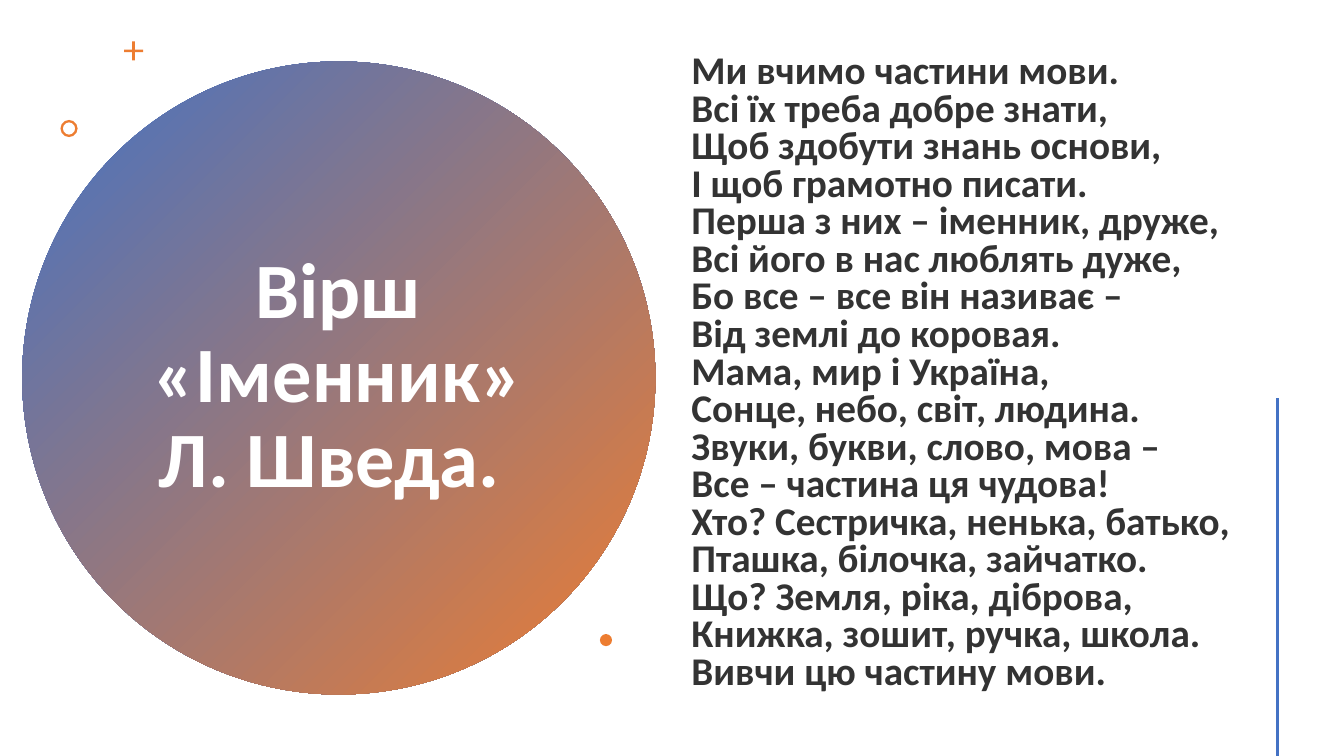
from lxml import etree
from pptx import Presentation
from pptx.dml.color import RGBColor
from pptx.enum.shapes import MSO_CONNECTOR, MSO_SHAPE
from pptx.enum.text import MSO_ANCHOR, PP_ALIGN
from pptx.oxml.ns import qn
from pptx.util import Inches, Pt

OVAL, RING, PLUS = MSO_SHAPE.OVAL, MSO_SHAPE.DONUT, MSO_SHAPE.CROSS
LEFT, CENTER, MIDDLE = PP_ALIGN.LEFT, PP_ALIGN.CENTER, MSO_ANCHOR.MIDDLE
STRAIGHT = MSO_CONNECTOR.STRAIGHT
FONT = "Calibri"
COLORS = {"blue": "4472C4", "orange": "ED7D31", "white": "FFFFFF", "ink": "333333"}
BLANK_LAYOUT = 6

POEM = [
    "Ми вчимо частини мови.",
    "Всі їх треба добре знати,",
    "Щоб здобути знань основи,",
    "І щоб грамотно писати.",
    "Перша з них – іменник, друже,",
    "Всі його в нас люблять дуже,",
    "Бо все – все він називає –",
    "Від землі до коровая.",
    "Мама, мир і Україна,",
    "Сонце, небо, світ, людина.",
    "Звуки, букви, слово, мова –",
    "Все – частина ця чудова!",
    "Хто? Сестричка, ненька, батько,",
    "Пташка, білочка, зайчатко.",
    "Що? Земля, ріка, діброва,",
    "Книжка, зошит, ручка, школа.",
    "Вивчи цю частину мови.",
]

presentation = Presentation()
presentation.slide_width, presentation.slide_height = Inches(13.33), Inches(7.5)
slide = presentation.slides.add_slide(presentation.slide_layouts[BLANK_LAYOUT])


def add_text(lines, left, top, width, height, *, size, color, align=LEFT, spacing=1.0, before=0):
    """Add a bold, vertically centred text box with one paragraph per line."""
    box = slide.shapes.add_textbox(Inches(left), Inches(top), Inches(width), Inches(height))
    frame = box.text_frame
    frame.word_wrap = True
    frame.vertical_anchor = MIDDLE
    frame.text = "\n".join(lines)
    for paragraph in frame.paragraphs:
        paragraph.alignment = align
        paragraph.line_spacing = spacing
        paragraph.space_before = Pt(before)
        font = paragraph.runs[0].font
        font.name, font.size, font.bold = FONT, Pt(size), True
        font.color.rgb = RGBColor.from_string(COLORS[color])


def add_round_shape(kind, left, top, diameter, thickness=None):
    """Add an orange, unlined shape; thickness is a share of its size."""
    shape = slide.shapes.add_shape(
        kind, Inches(left), Inches(top), Inches(diameter), Inches(diameter))
    shape.shadow.inherit = False
    shape.line.fill.background()
    shape.fill.solid()
    shape.fill.fore_color.rgb = RGBColor.from_string(COLORS["orange"])
    if thickness is not None:
        shape.adjustments[0] = thickness
    return shape


circle = add_round_shape(OVAL, 0.22, 0.61, 6.28)
circle.fill.gradient()
circle.fill.gradient_angle = 315
for stop, color in zip(circle.fill.gradient_stops, ("blue", "orange")):
    stop.color.rgb = RGBColor.from_string(COLORS[color])

add_text(["Вірш «Іменник» Л. Шведа. "], 1.36, 1.41, 3.99, 4.67,
         size=56, color="white", align=CENTER, spacing=0.9)

for kind, left, top, diameter, thickness in [
    (PLUS, 1.23, 0.41, 0.19, 0.43),
    (RING, 0.6, 1.19, 0.17, 0.14),
    (OVAL, 5.95, 6.29, 0.12, None),
]:
    add_round_shape(kind, left, top, diameter, thickness)

add_text(POEM, 6.76, 0.06, 5.84, 7.38, size=28, color="ink", spacing=0.5, before=10)

side_line = slide.shapes.add_connector(
    STRAIGHT, Inches(12.67), Inches(3.95), Inches(12.67), presentation.slide_height)
side_line.line.color.rgb = RGBColor.from_string(COLORS["blue"])
side_line.line.width = Pt(2)
etree.SubElement(side_line._element.spPr, qn("a:effectLst"))

presentation.save("out.pptx")
